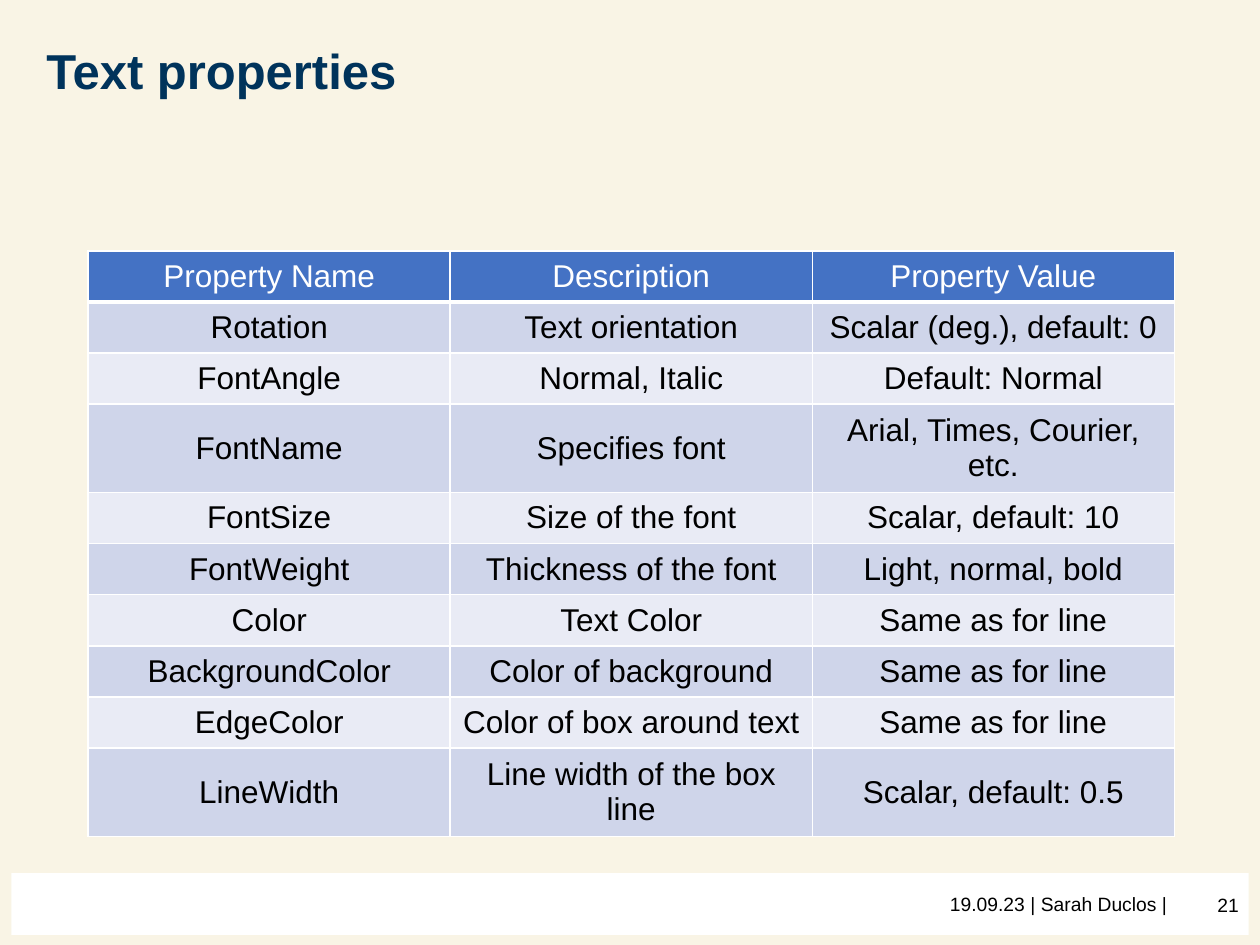
"""Build the slide that lists text properties in a table."""
from lxml import etree
from pptx import Presentation
from pptx.dml.color import RGBColor
from pptx.enum import shapes, text
from pptx.oxml import ns
from pptx.util import Inches, Pt

ROWS = [
    ("Property Name", "Description", "Property Value"),
    ("Rotation", "Text orientation", "Scalar (deg.), default: 0"),
    ("FontAngle", "Normal, Italic", "Default: Normal"),
    ("FontName", "Specifies font", "Arial, Times, Courier, etc."),
    ("FontSize", "Size of the font", "Scalar, default: 10"),
    ("FontWeight", "Thickness of the font", "Light, normal, bold"),
    ("Color", "Text Color", "Same as for line"),
    ("BackgroundColor", "Color of background", "Same as for line"),
    ("EdgeColor", "Color of box around text", "Same as for line"),
    ("LineWidth", "Line width of the box line", "Scalar, default: 0.5"),
]
LEFT, RIGHT, MID = text.PP_ALIGN.LEFT, text.PP_ALIGN.RIGHT, text.PP_ALIGN.CENTER
FOOT = [
    ("19.09.23", (7.44, 7.03, 2.25, 0.4), LEFT),
    ("| Sarah Duclos |", (8.08, 7.03, 3.38, 0.4), LEFT),
    ("21", (7.68, 7.04, 2.25, 0.4), RIGHT),
]
CREAM = RGBColor(0xF9, 0xF4, 0xE5)
WHITE = RGBColor(0xFF, 0xFF, 0xFF)
BLACK = RGBColor(0, 0, 0)
NAVY = RGBColor(0x00, 0x33, 0x5B)
BLUE = RGBColor(0x44, 0x72, 0xC4)
BANDS = RGBColor(0xE9, 0xEB, 0xF5), RGBColor(0xCF, 0xD5, 0xEA)


def write(frame, words, size, color, align, bold=False):
    para = frame.paragraphs[0]
    para.alignment = align
    run = para.add_run()
    run.text = words
    font = run.font
    font.name, font.size, font.bold = "Arial", Pt(size), bold
    font.color.rgb = color
    return para


def label(slide, box, *style, **more):
    frame = slide.shapes.add_textbox(*map(Inches, box)).text_frame
    frame.word_wrap = True
    return frame, write(frame, *style, **more)


def edge(cell, side, width):
    props = cell._tc.get_or_add_tcPr()
    line = etree.SubElement(props, ns.qn(f"a:ln{side}"), w=str(Pt(width)))
    fill = etree.SubElement(line, ns.qn("a:solidFill"))
    etree.SubElement(fill, ns.qn("a:srgbClr"), val=str(WHITE))


def fill_table(table):
    for r, row in enumerate(ROWS):
        for c, words in enumerate(row):
            cell = table.cell(r, c)
            for side in "LRTB":
                thick = (r, side) in ((0, "B"), (1, "T"))
                edge(cell, side, 3 if thick else 1)
            cell.fill.solid()
            cell.fill.fore_color.rgb = BANDS[r % 2] if r else BLUE
            cell.vertical_anchor = text.MSO_ANCHOR.MIDDLE
            write(cell.text_frame, words, 18, BLACK if r else WHITE, MID)


def main():
    deck = Presentation()
    deck.slide_width, deck.slide_height = Inches(10), Inches(7.5)
    slide = deck.slides.add_slide(deck.slide_layouts[6])
    back = slide.background.fill
    back.solid()
    back.fore_color.rgb = CREAM

    box = map(Inches, (0.09, 6.93, 9.82, 0.49))
    bar = slide.shapes.add_shape(shapes.MSO_SHAPE.RECTANGLE, *box)
    bar.shadow.inherit = False
    bar.fill.solid()
    bar.fill.fore_color.rgb = WHITE
    bar.line.fill.background()
    for words, place, align in FOOT:
        label(slide, place, words, 11, BLACK, align)

    frame, para = label(slide, (0.27, -0.14, 8.62, 1.45),
                        "Text properties", 28, NAVY, LEFT, bold=True)
    frame.vertical_anchor = text.MSO_ANCHOR.MIDDLE
    para.line_spacing = 0.9

    box = map(Inches, (0.7, 1.99, 8.62, 4.06))
    fill_table(slide.shapes.add_table(len(ROWS), len(ROWS[0]), *box).table)
    deck.save("out.pptx")


if __name__ == "__main__":
    main()
